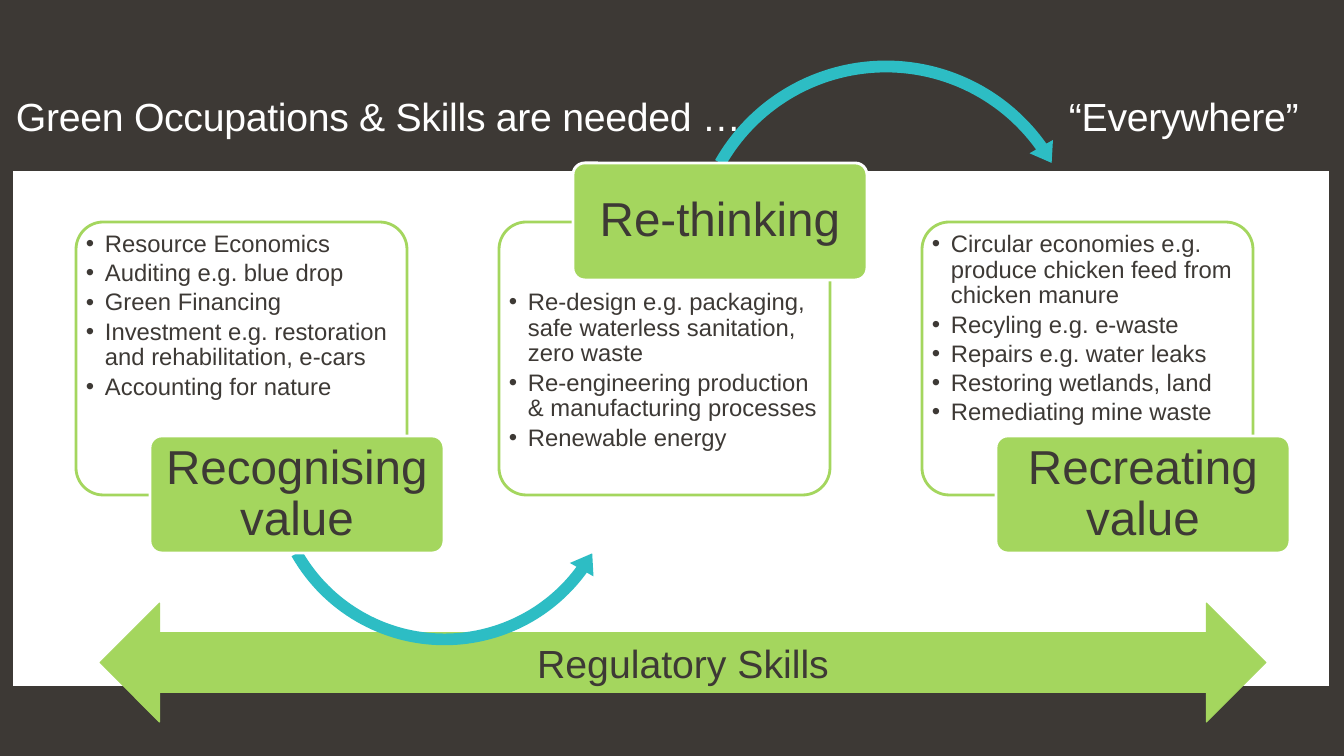
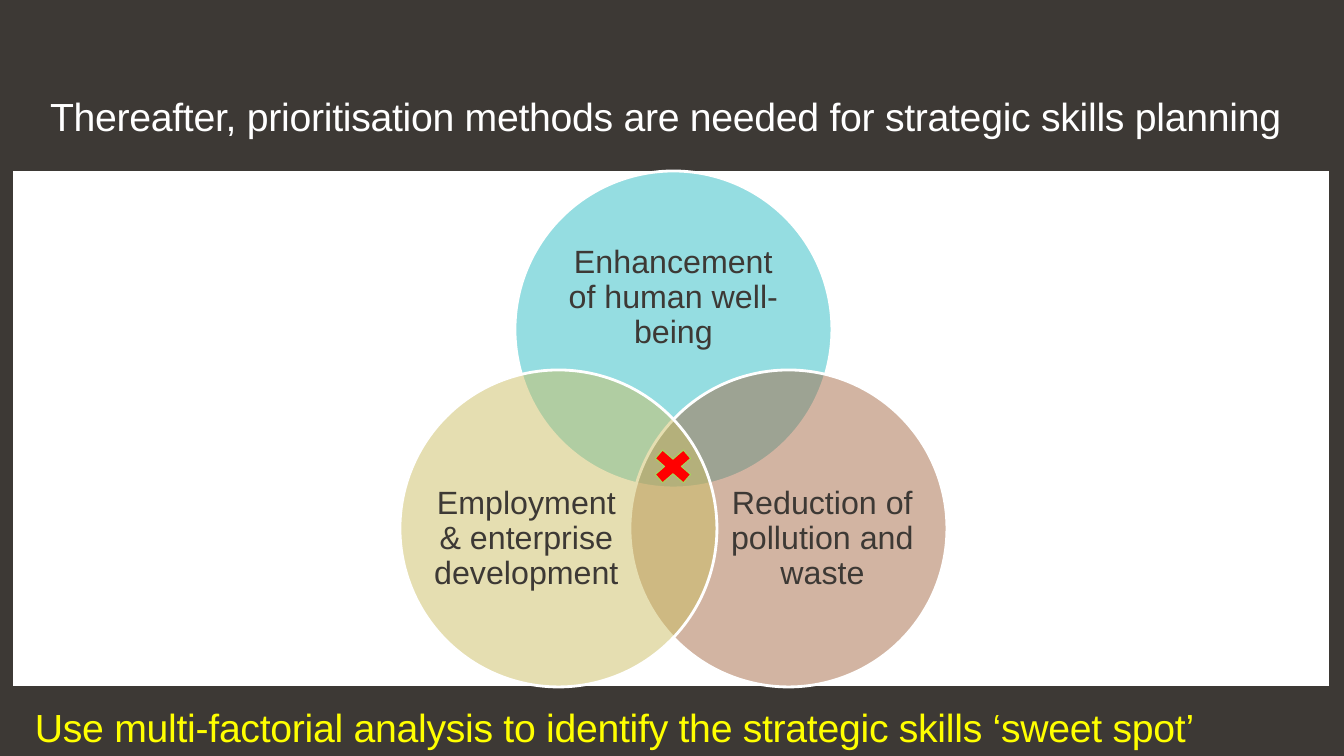
from dataclasses import dataclass
from typing import NamedTuple, Optional

from lxml.etree import SubElement
from pptx import Presentation
from pptx.dml.color import RGBColor
from pptx.enum.shapes import MSO_SHAPE
from pptx.enum.text import MSO_ANCHOR, MSO_AUTO_SIZE, PP_ALIGN
from pptx.oxml.ns import qn
from pptx.presentation import Presentation as Deck
from pptx.shapes.autoshape import Shape
from pptx.slide import Slide, SlideLayout
from pptx.text.text import TextFrame
from pptx.util import Pt

SLIDE_WIDTH, SLIDE_HEIGHT = 1344, 756
EMU_PER_PX = 12192000 / SLIDE_WIDTH


def px(length: int) -> int:
    return round(length * EMU_PER_PX)


@dataclass(frozen=True)
class Theme:
    font: str = "Arial"
    dark: str = "3D3935"
    white: str = "FFFFFF"
    green: str = "A4D65E"
    teal: str = "2DBDC4"
    brown: str = "A66B47"
    sand: str = "CCBE64"
    red: str = "FF0000"
    yellow: str = "FFFF00"
    heading: int = 28
    label: int = 34
    circle: int = 23
    bullet: int = 17
    outline: float = 2
    thin: float = 0.75


THEME = Theme()


class Box(NamedTuple):
    left: int
    top: int
    width: int
    height: int


class Margins(NamedTuple):
    left: int = 0
    top: int = 0
    right: int = 0
    bottom: int = 0


class CurvedArrow(NamedTuple):
    """Thickness and head width are percentages, angles are degrees."""
    preset: MSO_SHAPE
    box: Box
    thickness: float
    head_angle: float
    end_angle: float
    start_angle: float
    head_width: float


class Card(NamedTuple):
    label: str
    bullets: tuple[str, ...]
    label_on_top: bool = False
    arrow: Optional[CurvedArrow] = None


class Circle(NamedTuple):
    text: str
    color: str
    across: int
    down: int
    text_box: Box


PANEL = Box(13, 171, 1316, 515)
REGULATORY_ARROW = Box(100, 603, 1166, 119)
CARD = Box(76, 222, 331, 273)
CARD_STEP = 423
LABEL_OFFSET, LABEL_WIDTH, LABEL_HEIGHT = 74, 294, 117
LABEL_TOP_HIGH, LABEL_TOP_LOW = 163, 436
BULLET_INDENT = 19
CIRCLE_LEFT, CIRCLE_TOP, CIRCLE_SIZE = 515, 171, 317
SWEET_SPOT = Box(646, 443, 54, 47)

CARDS = (
    Card(
        "Recognising value",
        (
            "Resource Economics",
            "Auditing e.g. blue drop",
            "Green Financing",
            "Investment e.g. restoration and rehabilitation, e-cars",
            "Accounting for nature",
        ),
        arrow=CurvedArrow(MSO_SHAPE.LEFT_CIRCULAR_ARROW, Box(261, 286, 367, 367),
                          3.2, 6.55, 36.14, 150.41, 3.7),
    ),
    Card(
        "Re-thinking",
        (
            "Re-design e.g. packaging, safe waterless sanitation, zero waste",
            "Re-engineering production & manufacturing processes",
            "Renewable energy",
        ),
        label_on_top=True,
        arrow=CurvedArrow(MSO_SHAPE.CIRCULAR_ARROW, Box(682, 53, 408, 408),
                          2.9, 5.82, 324.59, 209.59, 3.3),
    ),
    Card(
        "Recreating value",
        (
            "Circular economies e.g. produce chicken feed from chicken manure",
            "Recyling e.g. e-waste",
            "Repairs e.g. water leaks",
            "Restoring wetlands, land",
            "Remediating mine waste",
        ),
    ),
)

CIRCLES = (
    Circle("Enhancement of human well-being", THEME.teal, 0, 0, Box(557, 227, 233, 142)),
    Circle("Reduction of pollution and waste", THEME.brown, 115, 199, Box(727, 452, 191, 174)),
    Circle("Employment & enterprise development", THEME.sand, -115, 199, Box(431, 452, 191, 174)),
)


def write(
    frame: TextFrame,
    *texts: str,
    size: int,
    color: str = THEME.dark,
    align: PP_ALIGN = PP_ALIGN.CENTER,
    anchor: MSO_ANCHOR = MSO_ANCHOR.MIDDLE,
    margins: Margins = Margins(),
    line_spacing: float = 0.9,
    space_after: float = 0,
    tracking: int = 0,
    bulleted: bool = False,
    tab_stop: int = 0,
) -> None:
    """Fill the frame with one paragraph per text; tracking is in 1/100 pt."""
    frame.word_wrap = True
    frame.auto_size = MSO_AUTO_SIZE.NONE
    frame.vertical_anchor = anchor
    frame.margin_left, frame.margin_top = px(margins.left), px(margins.top)
    frame.margin_right, frame.margin_bottom = px(margins.right), px(margins.bottom)
    for index, text in enumerate(texts):
        paragraph = frame.add_paragraph() if index else frame.paragraphs[0]
        paragraph.alignment = align
        paragraph.line_spacing = line_spacing
        paragraph.space_after = Pt(space_after)
        run = paragraph.add_run()
        run.text = text
        run.font.name = THEME.font
        run.font.size = Pt(size)
        run.font.color.rgb = RGBColor.from_string(color)
        if tracking:
            run.font._element.set("spc", str(tracking))
        properties = paragraph._p.get_or_add_pPr()
        if bulleted:
            properties.set("marL", str(px(BULLET_INDENT)))
            properties.set("indent", str(-px(BULLET_INDENT)))
            SubElement(properties, qn("a:buFont"), typeface=THEME.font)
            SubElement(properties, qn("a:buChar"), char="•")
        if tab_stop:
            tabs = SubElement(properties, qn("a:tabLst"))
            SubElement(tabs, qn("a:tab"), pos=str(px(tab_stop)), algn="l")


def write_heading(frame: TextFrame, text: str, color: str, tab_stop: int = 0) -> None:
    write(frame, text, size=THEME.heading, color=color, align=PP_ALIGN.LEFT,
          anchor=MSO_ANCHOR.TOP, line_spacing=1.2, space_after=3, tracking=-20,
          tab_stop=tab_stop)


def add_shape(
    slide: Slide,
    preset: MSO_SHAPE,
    box: Box,
    fill: str,
    line: Optional[str] = None,
    line_width: float = THEME.outline,
    opacity: int = 100,
) -> Shape:
    shape = slide.shapes.add_shape(preset, *map(px, box))
    shape.shadow.inherit = False
    shape.fill.solid()
    shape.fill.fore_color.rgb = RGBColor.from_string(fill)
    if opacity < 100:
        color = shape.element.spPr.find(qn("a:solidFill")).find(qn("a:srgbClr"))
        SubElement(color, qn("a:alpha"), val=str(opacity * 1000))
    if line:
        shape.line.color.rgb = RGBColor.from_string(line)
        shape.line.width = Pt(line_width)
    else:
        shape.line.fill.background()
    return shape


def add_text_box(slide: Slide, box: Box) -> TextFrame:
    return slide.shapes.add_textbox(*map(px, box)).text_frame


def add_rounded_box(slide: Slide, box: Box, fill: str, line: str) -> Shape:
    shape = add_shape(slide, MSO_SHAPE.ROUNDED_RECTANGLE, box, fill, line)
    shape.adjustments[0] = 0.1
    return shape


def add_curved_arrow(slide: Slide, arrow: CurvedArrow) -> None:
    shape = add_shape(slide, arrow.preset, arrow.box, THEME.teal)
    angles = (arrow.head_angle, arrow.end_angle, arrow.start_angle)
    values = (arrow.thickness / 100, *(angle * 0.6 for angle in angles), arrow.head_width / 100)
    for index, value in enumerate(values):
        shape.adjustments[index] = value


def add_card(slide: Slide, card: Card, left: int) -> None:
    body = add_rounded_box(slide, CARD._replace(left=left), THEME.white, THEME.green)
    write(body.text_frame, *card.bullets, size=THEME.bullet, align=PP_ALIGN.LEFT,
          anchor=MSO_ANCHOR.TOP, margins=Margins(2, 60 if card.label_on_top else 2, 2, 2),
          space_after=2.5, bulleted=True)
    if card.arrow:
        add_curved_arrow(slide, card.arrow)
    label_top = LABEL_TOP_HIGH if card.label_on_top else LABEL_TOP_LOW
    label_box = Box(left + LABEL_OFFSET, label_top, LABEL_WIDTH, LABEL_HEIGHT)
    label = add_rounded_box(slide, label_box, THEME.green, THEME.white)
    write(label.text_frame, card.label, size=THEME.label, margins=Margins(7, 5, 7, 5))


def add_circle(slide: Slide, circle: Circle) -> None:
    box = Box(CIRCLE_LEFT + circle.across, CIRCLE_TOP + circle.down, CIRCLE_SIZE, CIRCLE_SIZE)
    add_shape(slide, MSO_SHAPE.OVAL, box, circle.color, THEME.white, opacity=50)
    write(add_text_box(slide, circle.text_box), circle.text, size=THEME.circle)


def add_titled_slide(
    presentation: Deck, layout: SlideLayout, title: str, box: Box, tab_stop: int = 0
) -> Slide:
    """Add a slide with the white panel and a title above it."""
    slide = presentation.slides.add_slide(layout)
    add_shape(slide, MSO_SHAPE.RECTANGLE, PANEL, THEME.white)
    placeholder = slide.shapes.title
    placeholder.left, placeholder.top, placeholder.width, placeholder.height = map(px, box)
    write_heading(placeholder.text_frame, title, THEME.white, tab_stop)
    return slide


def build_skills_slide(presentation: Deck, layout: SlideLayout) -> None:
    slide = add_titled_slide(
        presentation, layout, "Green Occupations & Skills are needed …\t“Everywhere”",
        Box(16, 83, 1286, 55), tab_stop=1053)
    arrow = add_shape(slide, MSO_SHAPE.LEFT_RIGHT_ARROW, REGULATORY_ARROW,
                      THEME.green, THEME.green, THEME.thin)
    write(arrow.text_frame, "Regulatory Skills", size=THEME.heading, line_spacing=1)
    for index, card in enumerate(CARDS):
        add_card(slide, card, CARD.left + index * CARD_STEP)


def build_priorities_slide(presentation: Deck, layout: SlideLayout) -> None:
    slide = add_titled_slide(
        presentation, layout,
        "Thereafter, prioritisation methods are needed for strategic skills planning",
        Box(50, 83, 1247, 62))
    write_heading(
        add_text_box(slide, Box(35, 694, 1247, 62)),
        "Use multi-factorial analysis to identify the strategic skills ‘sweet spot’",
        THEME.yellow)
    for circle in CIRCLES:
        add_circle(slide, circle)
    add_shape(slide, MSO_SHAPE.MATH_MULTIPLY, SWEET_SPOT, THEME.red, THEME.green, THEME.thin)


def main() -> None:
    presentation = Presentation()
    presentation.slide_width, presentation.slide_height = px(SLIDE_WIDTH), px(SLIDE_HEIGHT)
    layout = presentation.slide_layouts.get_by_name("Title Only")
    layout.background.fill.solid()
    layout.background.fill.fore_color.rgb = RGBColor.from_string(THEME.dark)
    build_skills_slide(presentation, layout)
    build_priorities_slide(presentation, layout)
    presentation.save("out.pptx")


if __name__ == "__main__":
    main()
